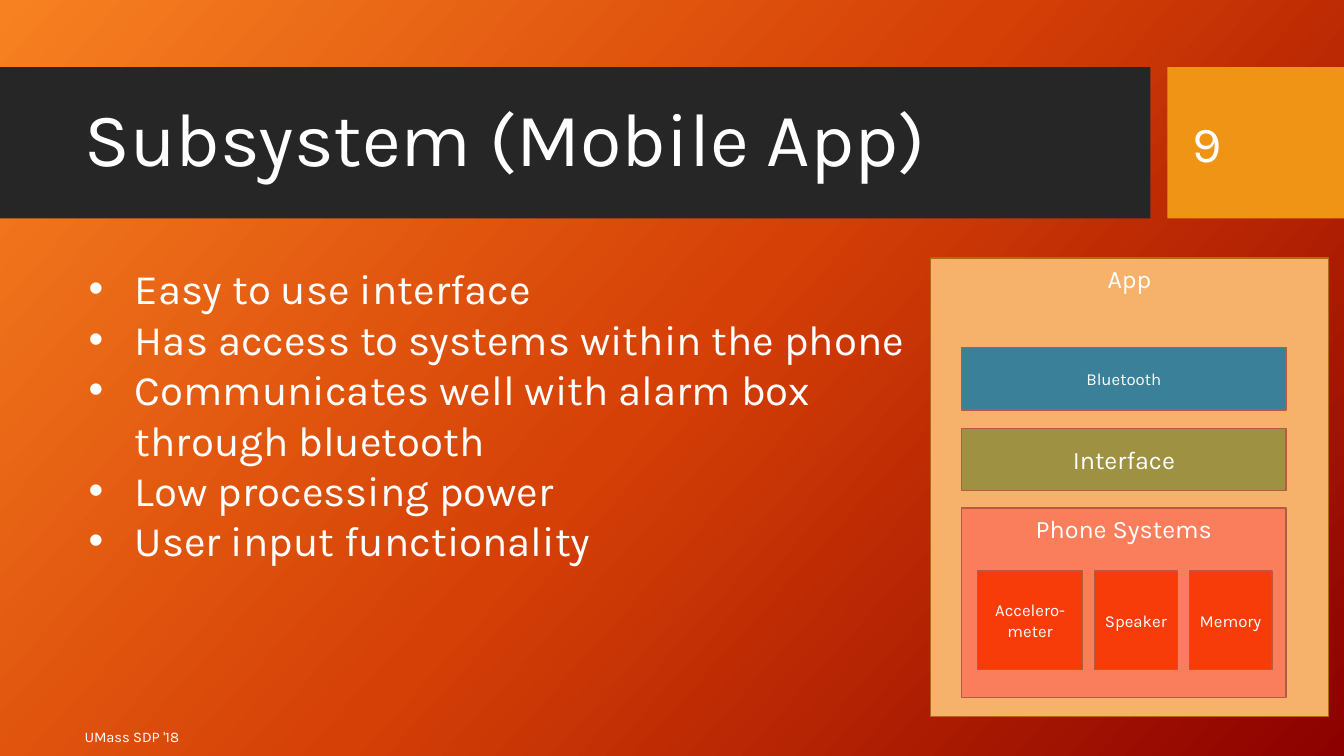
from copy import deepcopy
from dataclasses import dataclass

from lxml import etree
from pptx import Presentation
from pptx.dml.color import RGBColor
from pptx.enum import shapes, text
from pptx.oxml import ns
from pptx.util import Pt

TOP, MID = text.MSO_ANCHOR.TOP, text.MSO_ANCHOR.MIDDLE
LEFT, CENTER = text.PP_ALIGN.LEFT, text.PP_ALIGN.CENTER


@dataclass(frozen=True)
class Theme:
    face: str = "Karla"
    ink: str = "FFFFFF"
    bar: str = "262626"
    tag: str = "F09415"
    app: str = "F6B26B"
    rim: str = "AF6C0F"
    edge: str = "B65B43"
    blue: str = "3A8099"
    olive: str = "9E9142"
    coral: str = "FA7E5C"
    red: str = "F73C09"
    back: tuple = ((0, "F78121"), (0.5, "D54006"), (1, "8C0000"))
    title: float = 54
    number: float = 36
    body: float = 30
    label: float = 18
    small: float = 12
    foot: float = 10.5


THEME = Theme()


def color(code):
    return RGBColor.from_string(code)


def apply(target, values):
    for name, value in values.items():
        setattr(target, name, value)


def paint(slide):
    """Diagonal gradient behind everything."""
    fill = slide.background.fill
    fill.gradient()
    stops = slide.element.find(".//" + ns.qn("a:gsLst"))
    stops.append(deepcopy(stops[0]))
    for stop, (place, code) in zip(fill.gradient_stops, THEME.back):
        stop.position = place
        stop.color.rgb = color(code)
    fill.gradient_angle = 360 - 42


def bullet(para):
    props = para._p.get_or_add_pPr()
    apply_indent = {"marL": Pt(36), "indent": -Pt(33)}
    for name, value in apply_indent.items():
        props.set(name, str(int(value)))
    tint = etree.SubElement(props, ns.qn("a:buClr"))
    etree.SubElement(tint, ns.qn("a:srgbClr"), val=THEME.ink)
    etree.SubElement(props, ns.qn("a:buFont"), typeface="Arial")
    etree.SubElement(props, ns.qn("a:buChar"), char="•")


def write(shape, lines, size, anchor=MID, align=LEFT, side=7.2,
          listed=False, space=1.0):
    frame = shape.text_frame
    apply(frame, {
        "word_wrap": True, "vertical_anchor": anchor,
        "margin_left": Pt(side), "margin_right": Pt(side),
        "margin_top": Pt(3.6), "margin_bottom": Pt(3.6)})
    for i, line in enumerate(lines):
        para = frame.add_paragraph() if i else frame.paragraphs[0]
        if listed:
            bullet(para)
        apply(para, {"alignment": align, "line_spacing": space})
        run = para.add_run()
        run.text = line
        apply(run.font, {"name": THEME.face, "size": Pt(size)})
        run.font.color.rgb = color(THEME.ink)


def label(slide, box, lines, size, **style):
    shape = slide.shapes.add_textbox(*map(Pt, box))
    write(shape, lines, size, **style)


def block(slide, box, fill, edge=None):
    shape = slide.shapes.add_shape(
        shapes.MSO_SHAPE.RECTANGLE, *map(Pt, box))
    shape.shadow.inherit = False
    shape.fill.solid()
    shape.fill.fore_color.rgb = color(fill)
    if edge:
        shape.line.color.rgb = color(edge)
        shape.line.width = Pt(1)
    else:
        shape.line.fill.background()
    return shape


def layer(slide, box, fill, name, size, edge=THEME.edge, **style):
    write(block(slide, box, fill, edge), [name], size, align=CENTER, **style)


def diagram(slide):
    # App frame
    layer(slide, (664.6, 184.3, 284.4, 327.6), THEME.app, "App",
          THEME.label, edge=THEME.rim, anchor=TOP)

    # Stacked layers
    stack = (
        ("Bluetooth", 248.4, 44.6, THEME.blue, THEME.small, MID),
        ("Interface", 306, 44.6, THEME.olive, THEME.label, MID),
        ("Phone Systems", 362.9, 135.4, THEME.coral, THEME.label, TOP))
    for name, top, high, fill, size, anchor in stack:
        layer(slide, (686.9, top, 231.8, high), fill, name, size,
              anchor=anchor)

    # Phone parts, left to right with equal gaps
    left, gap = 698.4, 8.6
    for name, wide in (("Accelero-meter", 74.9), ("Speaker", 59),
                       ("Memory", 59)):
        layer(slide, (left, 407.8, wide, 70.6), THEME.red, name,
              THEME.small, side=5)
        left += wide + gap


def main():
    deck = Presentation()
    apply(deck, {"slide_width": Pt(960), "slide_height": Pt(540)})
    slide = deck.slides.add_slide(deck.slide_layouts[6])
    paint(slide)

    # Header
    block(slide, (0, 48, 821.8, 108), THEME.bar)
    block(slide, (833.8, 48, 126.2, 108), THEME.tag)
    label(slide, (53.3, 59, 756.7, 85), ["Subsystem (Mobile App)"],
          THEME.title, space=0.9)
    label(slide, (844.6, 59, 90.7, 85.7), ["9"], THEME.number)

    # Features
    label(slide, (53.3, 184.3, 620, 283.7), [
        "Easy to use interface",
        "Has access to systems within the phone",
        "Communicates well with alarm box through bluetooth",
        "Low processing power",
        "User input functionality",
    ], THEME.body, anchor=TOP, listed=True)

    # Footer
    label(slide, (53.3, 511.9, 540.7, 28.8), ["UMass SDP '18"], THEME.foot)

    diagram(slide)
    deck.save("out.pptx")


if __name__ == "__main__":
    main()
